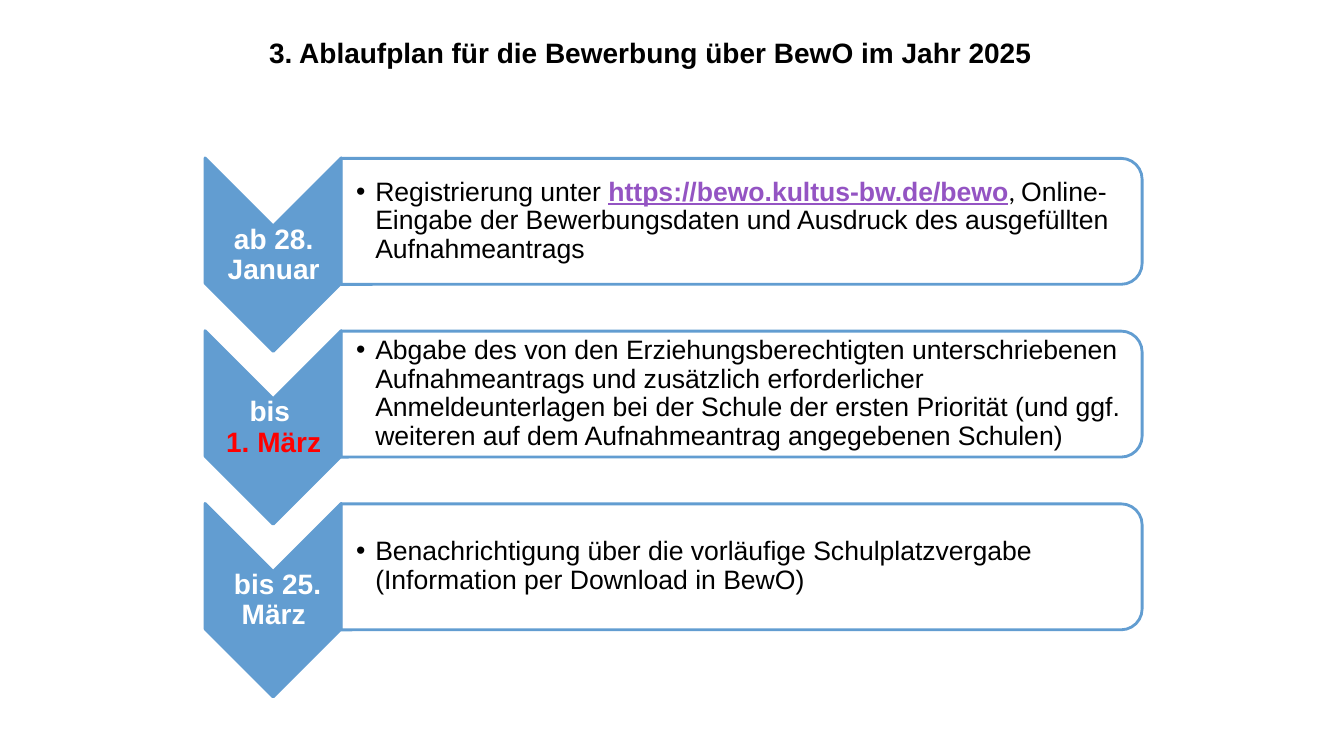
from lxml import etree
from pptx import Presentation
from pptx.dml.color import RGBColor
from pptx.enum.shapes import MSO_SHAPE
from pptx.enum.text import MSO_ANCHOR, MSO_AUTO_SIZE, PP_ALIGN
from pptx.oxml.ns import qn
from pptx.util import Pt

CHEVRON, ROUND = MSO_SHAPE.CHEVRON, MSO_SHAPE.ROUND_2_SAME_RECTANGLE
TOP, MIDDLE = MSO_ANCHOR.TOP, MSO_ANCHOR.MIDDLE
LEFT, CENTER = PP_ALIGN.LEFT, PP_ALIGN.CENTER
FIXED = MSO_AUTO_SIZE.NONE

COLORS = {"blue": "629DD1", "white": "FFFFFF", "black": "000000",
          "red": "FF0000", "link": "9454C3"}
PITCH = 123.4

STEPS = [
    ([[("ab 28.", {})], [("Januar", {})]],
     [("Registrierung unter ", {}),
      ("https://bewo.kultus-bw.de/bewo",
       {"color": "link", "bold": True, "line": True}),
      (", ", {"font": "Calibri"}),
      ("Online-Eingabe der Bewerbungsdaten und Ausdruck des "
       "ausgefüllten Aufnahmeantrags", {})]),
    ([[("bis ", {})], [("1. März", {"color": "red"})]],
     [("Abgabe des von den Erziehungsberechtigten unterschriebenen "
       "Aufnahmeantrags und zusätzlich erforderlicher Anmeldeunterlagen "
       "bei der Schule der ersten Priorität (und ggf. weiteren auf dem "
       "Aufnahmeantrag angegebenen Schulen)", {})]),
    ([[(" bis 25. März", {})]],
     [("Benachrichtigung über die vorläufige Schulplatzvergabe "
       "(Information per Download in BewO)", {})]),
]


def paint(name):
    return RGBColor.from_string(COLORS[name])


def place(shape, left, top, width, height):
    shape.left, shape.top = Pt(left), Pt(top)
    shape.width, shape.height = Pt(width), Pt(height)


def set_frame(shape, anchor, insets):
    frame = shape.text_frame
    frame.word_wrap = True
    frame.auto_size = FIXED
    frame.vertical_anchor = anchor
    (frame.margin_left, frame.margin_top,
     frame.margin_right, frame.margin_bottom) = [Pt(n) for n in insets]
    return frame.paragraphs[0]


def set_para(para, align, lead):
    para.alignment = align
    para.line_spacing = lead
    para.space_before = para.space_after = Pt(0)


def add_run(para, text, size, color="black", bold=False, line=False,
            font="Arial"):
    run = para.add_run()
    run.text = text
    run.font.name = font
    run.font.size = Pt(size)
    run.font.bold = bold
    run.font.underline = line
    run.font.color.rgb = paint(color)


def set_bullet(para):
    props = para._p.get_or_add_pPr()
    props.set("marL", str(Pt(13.7)))
    props.set("indent", str(-Pt(13.7)))
    etree.SubElement(props, qn("a:buFont")).set("typeface", "Arial")
    etree.SubElement(props, qn("a:buChar")).set("char", "•")


def add_turned(slide, kind, frame, fill):
    shape = slide.shapes.add_shape(kind, *[Pt(n) for n in frame])
    shape.rotation = 90
    shape.shadow.inherit = False
    shape.fill.solid()
    shape.fill.fore_color.rgb = paint(fill)
    shape.line.color.rgb = paint("blue")
    shape.line.width = Pt(2)
    return shape


def add_label(slide, top, lines):
    box = slide.shapes.add_textbox(Pt(146.9), Pt(top), Pt(97.2), Pt(41.8))
    para = set_frame(box, MIDDLE, [0.9] * 4)
    set_para(para, CENTER, 0.9)
    for i, line in enumerate(lines):
        if i:
            para.add_line_break()
        for text, style in line:
            add_run(para, text, 20, **{"color": "white", "bold": True, **style})


def add_box(slide, top):
    box = add_turned(slide, ROUND, (484.6, top, 90, 572.4), "white")
    tint = box.element.spPr.find(qn("a:solidFill")).find(qn("a:srgbClr"))
    etree.SubElement(tint, qn("a:alpha")).set("val", "90000")
    return box


def fill_body(body, top, runs):
    place(body, 243.7, top, 568.1, 81.4)
    para = set_frame(body, MIDDLE, (10.7, 0.9, 0.9, 0.9))
    para.level = 1
    set_para(para, LEFT, 0.9)
    set_bullet(para)
    for text, style in runs:
        add_run(para, text, 19, **style)


def add_step(slide, body, top, lines, runs):
    add_turned(slide, CHEVRON, (126, top + 16, 138.2, 97.2), "blue")
    add_label(slide, top + 44, lines)
    box = add_box(slide, top - 245.4)
    body.element.addprevious(box.element)
    fill_body(body, top, runs)


def set_title(title):
    place(title, 185, 9.4, 697.7, 43.9)
    para = set_frame(title, TOP, (7.2, 3.6, 7.2, 3.6))
    set_para(para, LEFT, 1.5)
    add_run(para, "3. Ablaufplan für die Bewerbung über BewO im Jahr 2025",
            20, bold=True)


def main():
    deck = Presentation()
    deck.slide_width, deck.slide_height = Pt(960), Pt(540)
    slide = deck.slides.add_slide(deck.slide_layouts[4])
    title, *bodies, spare = slide.placeholders
    spare.element.getparent().remove(spare.element)
    set_title(title)
    for i, (body, (lines, runs)) in enumerate(zip(bodies, STEPS)):
        add_step(slide, body, 117.3 + i * PITCH, lines, runs)
    deck.save("out.pptx")


if __name__ == "__main__":
    main()
